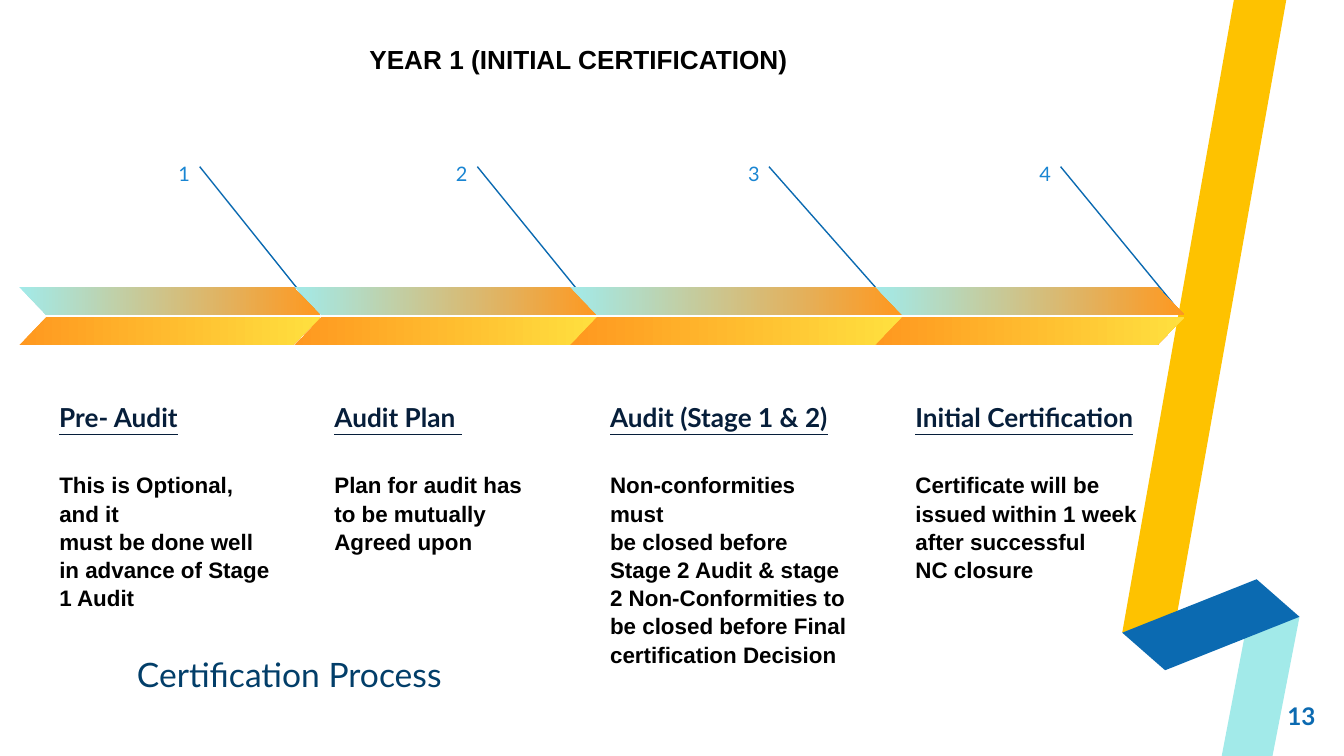
from dataclasses import dataclass

from lxml.etree import SubElement
from pptx import Presentation
from pptx.dml.color import RGBColor
from pptx.enum.shapes import MSO_CONNECTOR, MSO_SHAPE
from pptx.enum.text import MSO_ANCHOR, PP_ALIGN
from pptx.oxml.ns import qn
from pptx.util import Cm, Pt


@dataclass(frozen=True)
class Theme:
    sans: str = "Arial"
    display: str = "Lato"
    black: str = "000000"
    navy: str = "061E3A"
    deep_blue: str = "023E69"
    blue: str = "0B6AB1"
    light_blue: str = "1985D2"
    aqua: str = "A2EAE9"
    orange: str = "FF981F"
    yellow: str = "FFE03F"
    gold: str = "FEC200"
    caption_size: float = 18
    title_size: float = 14
    heading_size: float = 14
    page_size: float = 13
    body_size: float = 12
    number_size: float = 10.7


THEME = Theme()
INSET = 0.33
STEPS_TOP = 2.72

# Left edge and width of the arrow segment, heading, paragraphs
STEPS = [
    (0.36, 5.69, "Pre- Audit",
     ["This is Optional, and it",
      "must be done well in advance of Stage 1 Audit"]),
    (5.56, 5.77, "Audit Plan ",
     ["Plan for audit has", "to be mutually", "Agreed upon"]),
    (10.77, 6.27, "Audit (Stage 1 & 2)",
     ["Non-conformities must",
      "be closed before Stage 2 Audit & stage 2 Non-Conformities to be "
      "closed before Final certification Decision"]),
    (16.54, 5.84, "Initial Certification",
     ["Certificate will be issued within 1 week after successful",
      "NC closure"]),
]

# Ribbon outlines, relative to the ribbon's top left corner
RIBBON = [
    (THEME.gold, [(2.11, 0), (3.1, 0), (1.04, 11.58), (0, 11.96)]),
    (THEME.aqua, [(1.88, 14.29), (2.31, 12.04), (3.35, 11.66), (2.84, 14.29)]),
    (THEME.blue, [(0, 11.96), (2.54, 10.95), (3.35, 11.66), (0.81, 12.67)]),
]


def rgb(value):
    return RGBColor.from_string(value)


def write(tf, lines, font, size, color, bold=False, underline=None,
          align=PP_ALIGN.LEFT, anchor=MSO_ANCHOR.TOP, inset=0.0,
          spacing=None):
    tf.word_wrap = True
    tf.vertical_anchor = anchor
    tf.margin_left = tf.margin_right = Cm(inset)
    tf.margin_top = tf.margin_bottom = Cm(inset)
    tf.text = "\n".join(lines)
    for p in tf.paragraphs:
        p.alignment = align
        p.line_spacing = spacing
        for r in p.runs:
            r.font.name = font
            r.font.size = Pt(size)
            r.font.bold = bold
            r.font.underline = underline
            r.font.color.rgb = rgb(color)


def add_text(s, x, y, w, h, lines, *args, **style):
    box = s.shapes.add_textbox(Cm(x), Cm(y), Cm(w), Cm(h))
    write(box.text_frame, lines, *args, **style)


def add_title(s, x, y, w, h, text):
    sp = s.shapes.title
    sp.left, sp.top, sp.width, sp.height = Cm(x), Cm(y), Cm(w), Cm(h)
    write(sp.text_frame, [text], THEME.sans, THEME.title_size, THEME.black,
          bold=True, inset=0.25, anchor=MSO_ANCHOR.MIDDLE)


def add_ribbon(s, x, y):
    for color, points in RIBBON:
        outline = [(Cm(x + dx), Cm(y + dy)) for dx, dy in points]
        builder = s.shapes.build_freeform(*outline[0])
        builder.add_line_segments(outline[1:], close=True)
        sp = builder.convert_to_shape()
        sp.shadow.inherit = False
        sp.fill.solid()
        sp.fill.fore_color.rgb = rgb(color)
        sp.line.fill.background()


def add_band(s, x, y, w, start, end, mirrored=False):
    """Add one slanted half of an arrow segment, mirrored top to bottom if asked."""
    sp = s.shapes.add_shape(MSO_SHAPE.PARALLELOGRAM,
                            Cm(x), Cm(y), Cm(w), Cm(0.53))
    sp.adjustments[0] = 0.97
    sp.shadow.inherit = False
    sp.line.fill.background()
    sp.fill.gradient()
    sp.fill.gradient_angle = 0
    for stop, color, position in zip(sp.fill.gradient_stops, (start, end), (0, 1)):
        stop.color.rgb = rgb(color)
        stop.position = position
    if mirrored:
        sp.rotation = 180
        sp._element.spPr.find(qn("a:xfrm")).set("flipH", "1")


def add_pointer(s, x1, y1, x2, y2):
    line = s.shapes.add_connector(MSO_CONNECTOR.STRAIGHT,
                                  Cm(x1), Cm(y1), Cm(x2), Cm(y2))
    line.line.color.rgb = rgb(THEME.blue)
    line.line.width = Pt(0.75)
    SubElement(line._element.spPr, qn("a:effectLst"))


def add_step(s, x, y, w, number, heading, paragraphs):
    text_x = x + 0.43
    add_text(s, x + 0.285 * w, y, 0.34 * w, 0.89, [str(number)],
             THEME.display, THEME.number_size, THEME.light_blue,
             align=PP_ALIGN.RIGHT, inset=INSET, spacing=1.15)
    add_text(s, text_x, y + 4.14, 0.82 * w, 1.65, [heading],
             THEME.display, THEME.heading_size, THEME.navy, bold=True,
             underline=True, anchor=MSO_ANCHOR.BOTTOM, inset=INSET,
             spacing=1.15)
    add_text(s, text_x, y + 5.84, 0.842 * w, 2.74, paragraphs,
             THEME.sans, THEME.body_size, THEME.black, bold=True,
             inset=INSET, spacing=1.05)
    add_pointer(s, x + 0.6 * w, y + 0.43, x + 0.99 * w, y + 3.2)
    add_band(s, x, y + 2.7, w, THEME.aqua, THEME.orange, mirrored=True)
    add_band(s, x, y + 3.28, w, THEME.orange, THEME.yellow)


def main():
    prs = Presentation()
    prs.slide_width, prs.slide_height = Cm(25.4), Cm(14.29)
    s = prs.slides.add_slide(prs.slide_layouts[5])
    add_ribbon(s, 21.21, 0)
    add_title(s, 6.73, 0.61, 12.67, 1.02, "YEAR 1 (INITIAL CERTIFICATION)")
    add_text(s, 2.59, 12.24, 20.02, 0.97, ["Certification Process"],
             THEME.display, THEME.caption_size, THEME.deep_blue, spacing=1.15)
    add_text(s, 23.34, 12.98, 1.52, 1.09, ["13"],
             THEME.display, THEME.page_size, THEME.blue, bold=True,
             align=PP_ALIGN.RIGHT, anchor=MSO_ANCHOR.MIDDLE)
    for number, (x, w, heading, paragraphs) in enumerate(STEPS, 1):
        add_step(s, x, STEPS_TOP, w, number, heading, paragraphs)
    prs.save("out.pptx")


if __name__ == "__main__":
    main()
